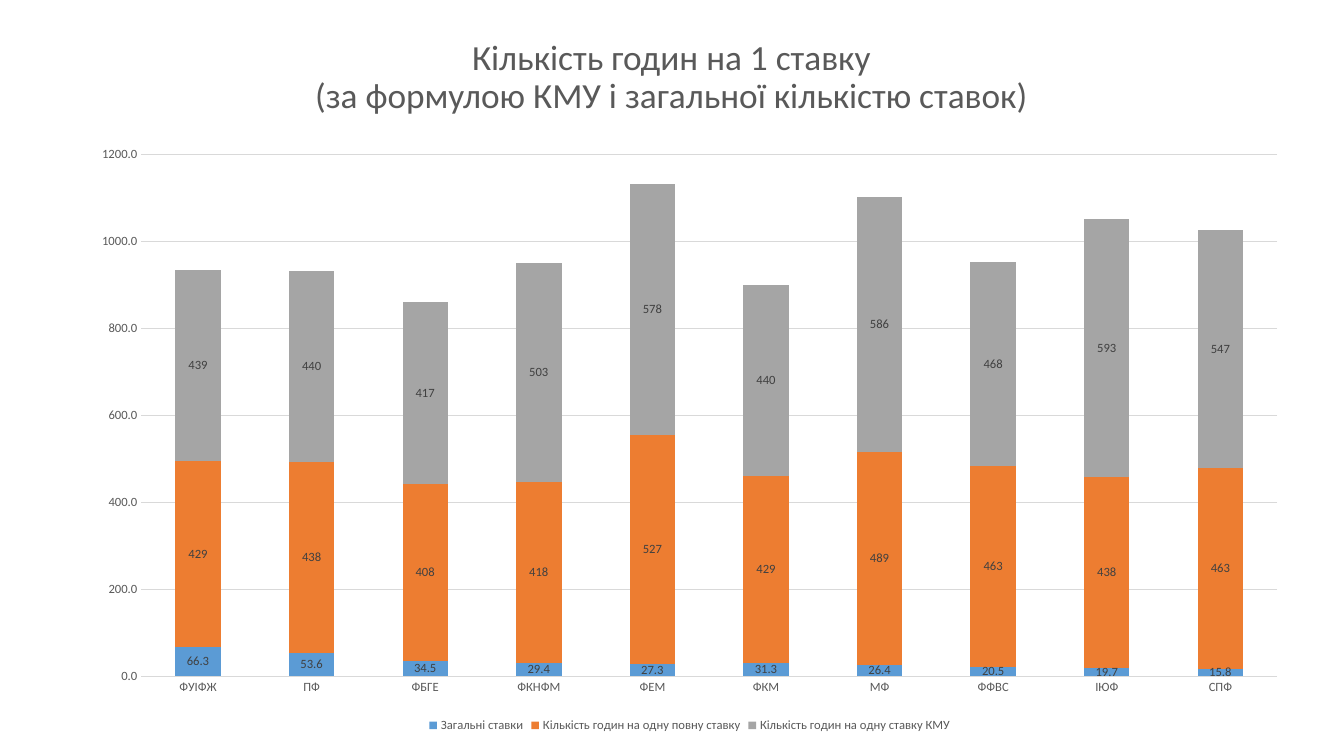
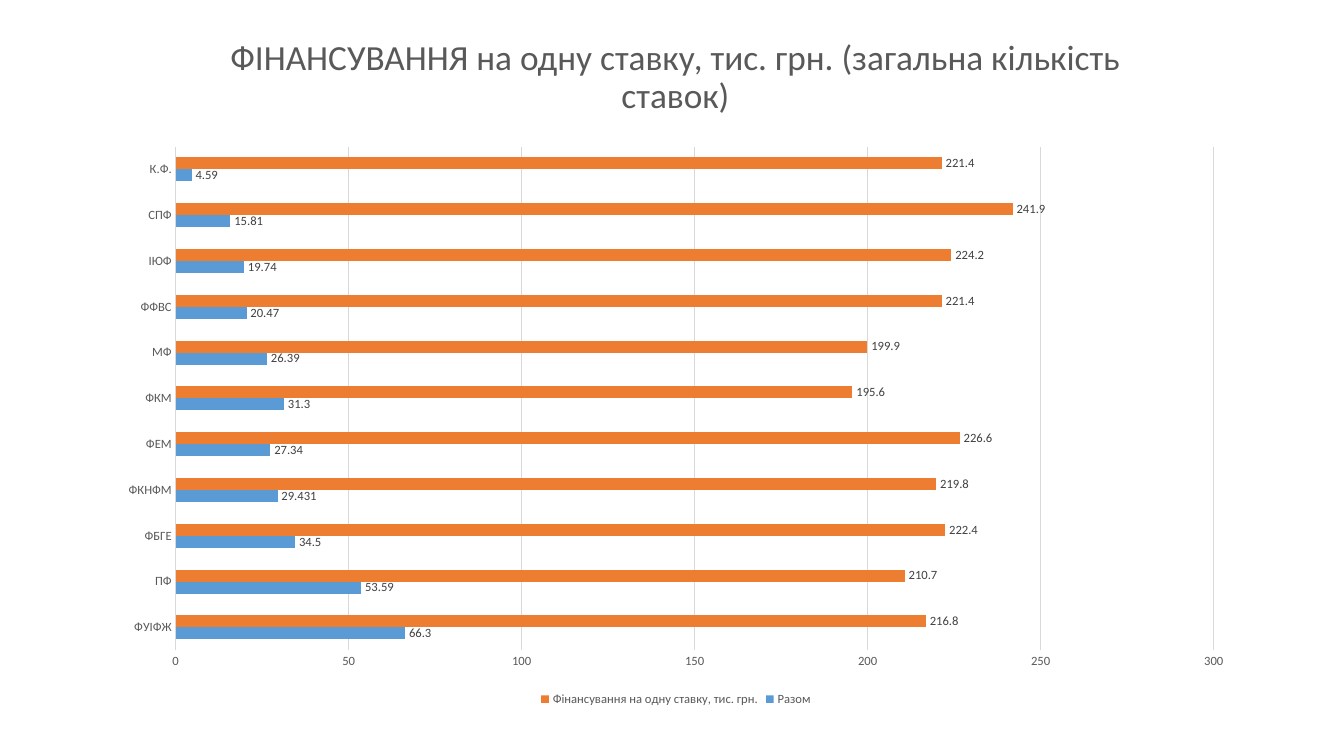
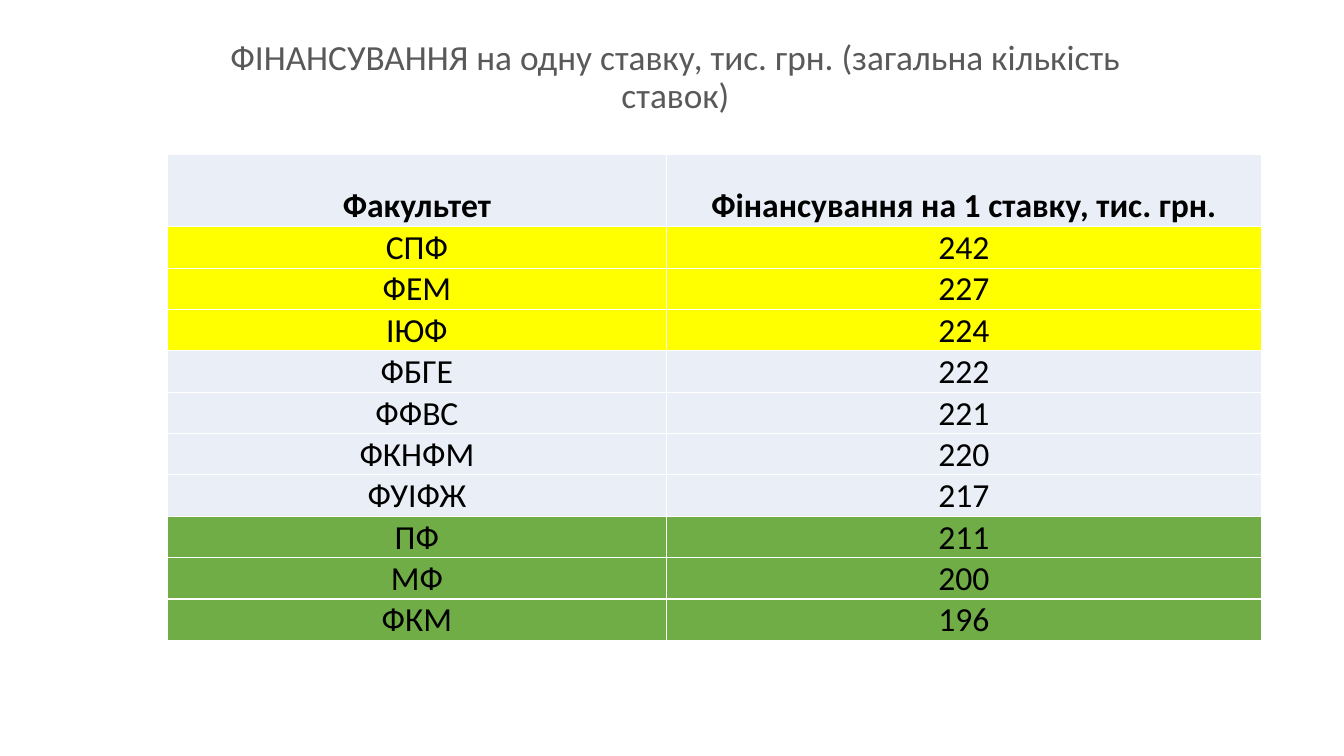
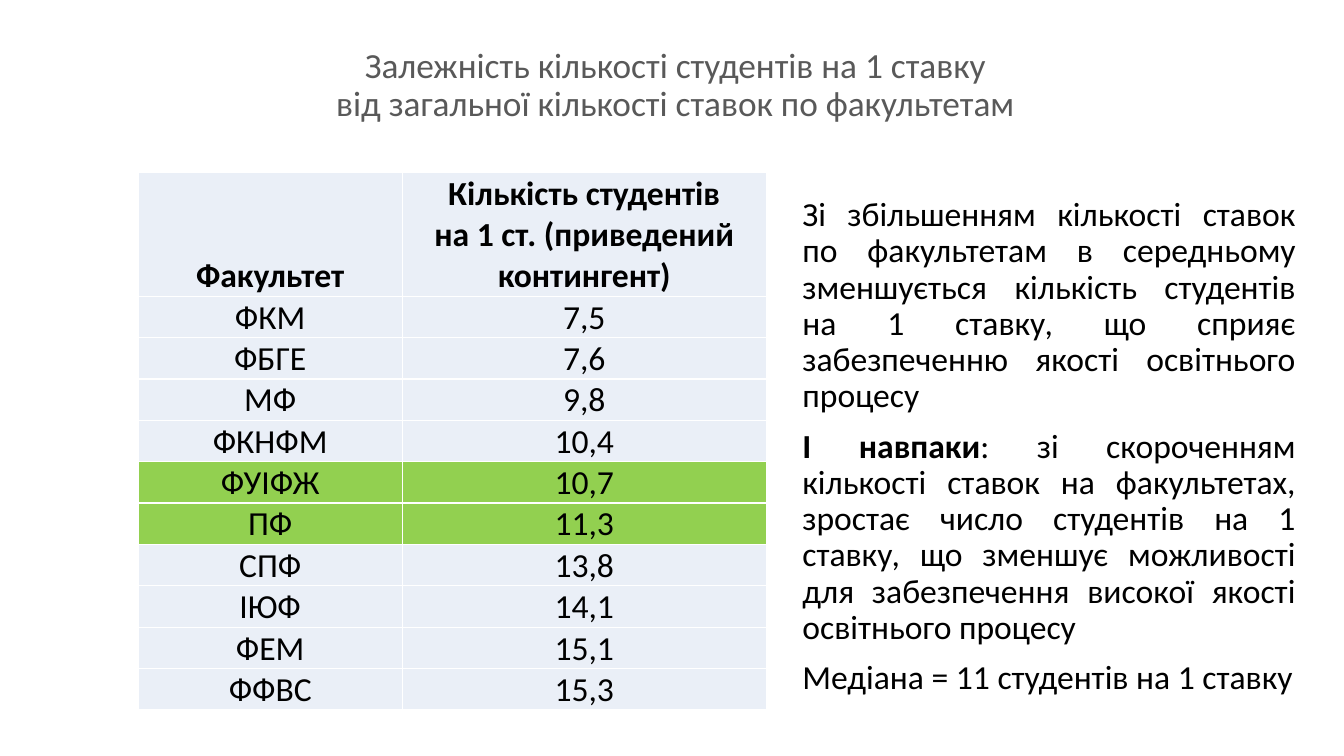
from pptx import Presentation
from pptx.chart.data import CategoryChartData
from pptx.dml.color import RGBColor
from pptx.enum.chart import XL_CHART_TYPE as CT, XL_LEGEND_POSITION as LP, XL_TICK_MARK as TM
from pptx.enum.text import MSO_ANCHOR as ANCHOR, PP_ALIGN as ALIGN
from pptx.oxml import parse_xml
from pptx.oxml.ns import nsdecls
from pptx.util import Inches, Pt

# Shared style
FONT = "Calibri"
BLACK = RGBColor(0x00, 0x00, 0x00)
GRAY = RGBColor(0x59, 0x59, 0x59)
LABEL = RGBColor(0x40, 0x40, 0x40)
GRID = RGBColor(0xD9, 0xD9, 0xD9)
BLUE = RGBColor(0x5B, 0x9B, 0xD5)
ORANGE = RGBColor(0xED, 0x7D, 0x31)
SILVER = RGBColor(0xA5, 0xA5, 0xA5)
PALE = RGBColor(0xEA, 0xEF, 0xF7)
YELLOW = RGBColor(0xFF, 0xFF, 0x00)
GREEN = RGBColor(0x70, 0xAD, 0x47)
LIME = RGBColor(0x92, 0xD0, 0x50)
ROW_H = 0.41

# Content
FACULTIES = ["ФУІФЖ", "ПФ", "ФБГЕ", "ФКНФМ", "ФЕМ", "ФКМ", "МФ", "ФФВС", "ІЮФ", "СПФ"]
FUNDING_TITLE = "ФІНАНСУВАННЯ на одну ставку, тис. грн. (загальна кількість ставок)"

# Series: name, colour, label format, values
HOURS = [
    ("Загальні ставки", BLUE, "0.0",
     [66.3, 53.6, 34.5, 29.4, 27.3, 31.3, 26.4, 20.5, 19.7, 15.8]),
    ("Кількість годин на одну повну ставку", ORANGE, "0",
     [429, 438, 408, 418, 527, 429, 489, 463, 438, 463]),
    ("Кількість годин на одну ставку КМУ", SILVER, "0",
     [439, 440, 417, 503, 578, 440, 586, 468, 593, 547]),
]
FUNDING = [
    ("Разом", BLUE, "General",
     [66.3, 53.59, 34.5, 29.431, 27.34, 31.3, 26.39, 20.47, 19.74, 15.81, 4.59]),
    ("Фінансування на одну ставку, тис. грн.", ORANGE, "0.0",
     [216.8, 210.7, 222.4, 219.8, 226.6, 195.6, 199.9, 221.4, 224.2, 241.9, 221.4]),
]

# Table rows: faculty, value, fill
FUNDING_HEAD = ("Факультет", "Фінансування на 1 ставку, тис. грн.", PALE)
FUNDING_ROWS = [
    ("СПФ", "242", YELLOW), ("ФЕМ", "227", YELLOW), ("ІЮФ", "224", YELLOW),
    ("ФБГЕ", "222", PALE), ("ФФВС", "221", PALE), ("ФКНФМ", "220", PALE),
    ("ФУІФЖ", "217", PALE),
    ("ПФ", "211", GREEN), ("МФ", "200", GREEN), ("ФКМ", "196", GREEN),
]
STUDENTS_HEAD = ("Факультет", "Кількість студентів\nна 1 ст. (приведений контингент)", PALE)
STUDENTS_ROWS = [
    ("ФКМ", "7,5", PALE), ("ФБГЕ", "7,6", PALE), ("МФ", "9,8", PALE),
    ("ФКНФМ", "10,4", PALE), ("ФУІФЖ", "10,7", LIME), ("ПФ", "11,3", LIME),
    ("СПФ", "13,8", PALE), ("ІЮФ", "14,1", PALE), ("ФЕМ", "15,1", PALE),
    ("ФФВС", "15,3", PALE),
]

# Paragraphs as (text, bold) runs
CONCLUSIONS = [
    [("Зі збільшенням кількості ставок по факультетам в середньому зменшується "
      "кількість студентів на 1 ставку, що сприяє забезпеченню якості освітнього процесу", False)],
    [("І навпаки", True),
     (": зі скороченням кількості ставок на факультетах, зростає число студентів на 1 ставку, "
      "що зменшує можливості для забезпечення високої якості освітнього процесу", False)],
    [("Медіана = 11 студентів на 1 ставку", False)],
]


def style_font(font, size, color, bold=False):
    font.name, font.size, font.bold = FONT, Pt(size), bold
    font.color.rgb = color


def add_text(slide, box, paragraphs, size, color, align, anchor=ANCHOR.TOP):
    tf = slide.shapes.add_textbox(*map(Inches, box)).text_frame
    tf.word_wrap = True
    tf.vertical_anchor = anchor
    for i, runs in enumerate(paragraphs):
        p = tf.paragraphs[0] if i == 0 else tf.add_paragraph()
        p.alignment, p.line_spacing = align, 0.9
        p.space_before = Pt(10 if i else 0)
        for text, bold in runs:
            r = p.add_run()
            r.text = text
            style_font(r.font, size, color, bold)


def add_slide(prs, title, top=0.43, width=10.08):
    slide = prs.slides.add_slide(prs.slide_layouts[6])
    add_text(slide, (1.66, top, width, 0.77), [[]], 25.2, GRAY, ALIGN.CENTER, ANCHOR.BOTTOM)
    p = slide.shapes[0].text_frame.paragraphs[0]
    p.text = title.replace("\n", "\v")
    for r in p.runs:
        style_font(r.font, 25.2, GRAY)
    return slide


def add_chart(slide, kind, box, categories, series, gap, axis_format, top_value, step):
    data = CategoryChartData()
    data.categories = categories
    for name, _, number_format, values in series:
        data.add_series(name, values, number_format)
    chart = slide.shapes.add_chart(kind, *map(Inches, box), data).chart
    style_font(chart.font, 10, BLACK)
    chart.has_title = False
    chart.has_legend = True
    chart.legend.position = LP.BOTTOM
    chart.legend.include_in_layout = False
    style_font(chart.legend.font, 9, GRAY)

    # Axes
    cat, val = chart.category_axis, chart.value_axis
    for axis in (cat, val):
        axis.major_tick_mark = axis.minor_tick_mark = TM.NONE
        style_font(axis.tick_labels.font, 9, GRAY)
    val.minimum_scale, val.maximum_scale, val.major_unit = 0, top_value, step
    val.tick_labels.number_format = axis_format
    val.tick_labels.number_format_is_linked = False
    val.format.line.fill.background()
    val.has_major_gridlines = True
    for line in (cat.format.line, val.major_gridlines.format.line):
        line.color.rgb, line.width = GRID, Pt(0.75)

    # Bars and their labels
    plot = chart.plots[0]
    plot.gap_width = gap
    plot.vary_by_categories = False
    plot.overlap = 100 if kind == CT.COLUMN_STACKED else 0
    for bars, (_, color, number_format, _) in zip(plot.series, series):
        bars.format.fill.solid()
        bars.format.fill.fore_color.rgb = color
        bars.invert_if_negative = False
        labels = bars.data_labels
        labels.show_value = True
        labels.number_format = number_format
        labels.number_format_is_linked = False
        style_font(labels.font, 9, LABEL)


def fill_cell(cell, text, color, bold, anchor):
    cell.margin_left = cell.margin_right = cell.margin_top = Inches(0.01)
    cell.margin_bottom = 0
    cell.vertical_anchor = anchor
    for side in "LRTB":
        cell._tc.get_or_add_tcPr().append(parse_xml(
            f'<a:ln{side} {nsdecls("a")} w="12700"><a:solidFill>'
            f'<a:srgbClr val="FFFFFF"/></a:solidFill></a:ln{side}>'))
    cell.fill.solid()
    cell.fill.fore_color.rgb = color
    cell.text_frame.text = text
    for p in cell.text_frame.paragraphs:
        p.alignment = ALIGN.CENTER
        for r in p.runs:
            style_font(r.font, 24, BLACK, bold)


def add_table(slide, left, top, widths, head_h, head, rows, name_anchor):
    heights = [head_h] + [ROW_H] * len(rows)
    box = (left, top, sum(widths), sum(heights))
    table = slide.shapes.add_table(len(heights), len(widths), *map(Inches, box)).table
    for col, width in zip(table.columns, widths):
        col.width = Inches(width)
    for i, (name, value, color) in enumerate([head] + rows):
        table.rows[i].height = Inches(heights[i])
        fill_cell(table.cell(i, 0), name, color, i == 0, name_anchor if i else ANCHOR.BOTTOM)
        fill_cell(table.cell(i, 1), value, color, i == 0, ANCHOR.BOTTOM)


def main():
    prs = Presentation()
    prs.slide_width, prs.slide_height = Inches(13.33), Inches(7.5)

    # Hours per position
    s = add_slide(prs, "Кількість годин на 1 ставку\n(за формулою КМУ і загальної кількістю ставок)",
                  width=10)
    add_chart(s, CT.COLUMN_STACKED, (0.77, 1.34, 12.14, 5.97), FACULTIES, HOURS,
              150, "0.0", 1200, 200)

    # Funding chart
    s = add_slide(prs, FUNDING_TITLE)
    add_chart(s, CT.BAR_CLUSTERED, (1.05, 1.34, 11.31, 5.71), FACULTIES + ["К.Ф."], FUNDING,
              182, "General", 300, 50)

    # Funding ranking
    s = add_slide(prs, FUNDING_TITLE)
    add_table(s, 1.66, 1.53, (4.95, 5.9), 0.72, FUNDING_HEAD, FUNDING_ROWS, ANCHOR.BOTTOM)

    # Students per position
    s = add_slide(prs, "Залежність кількості студентів на 1 ставку\n"
                       "від загальної кількості ставок по факультетам", top=0.51)
    add_text(s, (7.86, 1.91, 5.09, 5.39), CONCLUSIONS, 24, BLACK, ALIGN.JUSTIFY)
    add_table(s, 1.37, 1.71, (2.62, 3.61), 3 * ROW_H, STUDENTS_HEAD, STUDENTS_ROWS, ANCHOR.MIDDLE)

    prs.save("out.pptx")


if __name__ == "__main__":
    main()
